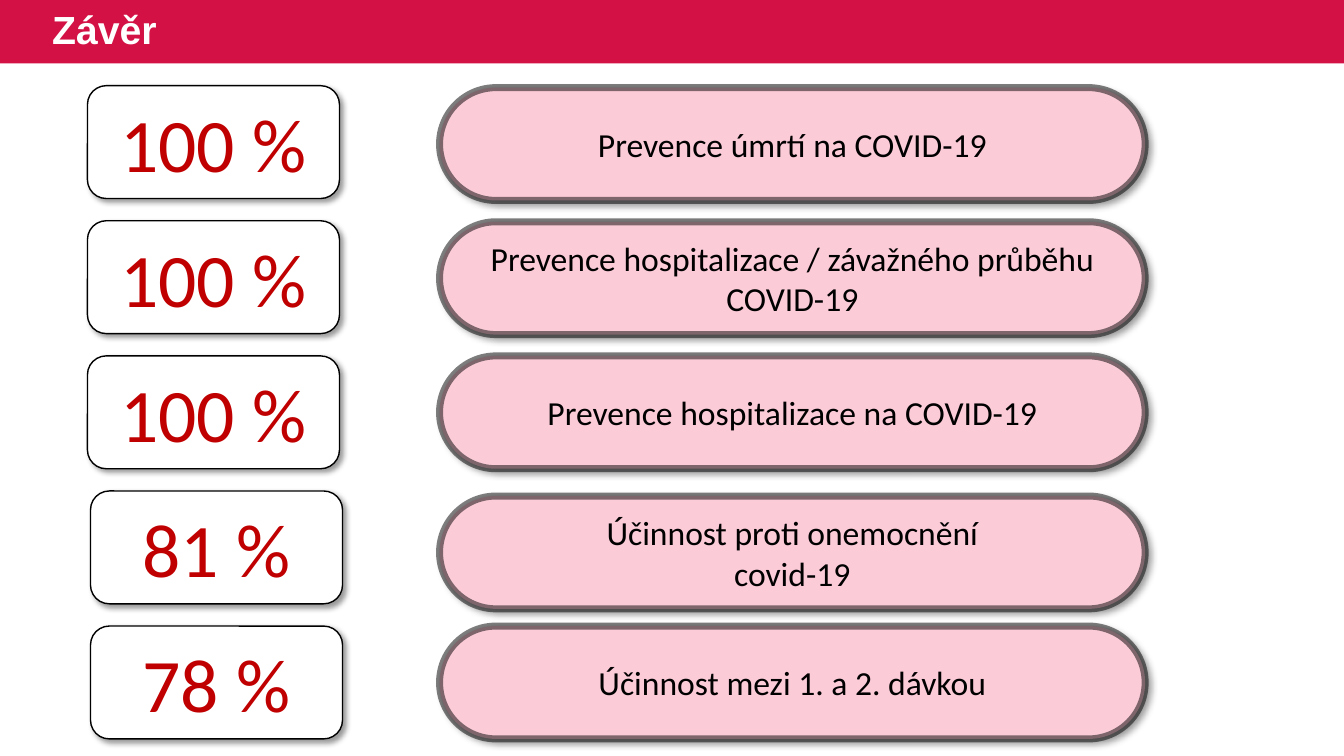
from dataclasses import dataclass

from lxml import etree
from pptx import Presentation
from pptx.dml.color import RGBColor
from pptx.enum.shapes import MSO_SHAPE
from pptx.enum.text import MSO_ANCHOR, PP_ALIGN
from pptx.oxml.ns import qn
from pptx.util import Pt

RECTANGLE = MSO_SHAPE.RECTANGLE
ROUNDED = MSO_SHAPE.ROUNDED_RECTANGLE
MIDDLE = MSO_ANCHOR.MIDDLE
LEFT = PP_ALIGN.LEFT
CENTER = PP_ALIGN.CENTER


@dataclass(frozen=True)
class Theme:
    """Colours, fonts and type sizes of the slide."""
    banner: str = "D31145"
    paper: str = "FFFFFF"
    ink: str = "000000"
    figure: str = "C00000"
    pill: str = "FBCBD8"
    title_font: str = "Arial"
    body_font: str = "Calibri"
    title_size: int = 28
    figure_size: int = 54
    label_size: int = 24


@dataclass(frozen=True)
class Box:
    """A rectangle in points."""
    left: float
    top: float
    width: float
    height: float

    def lengths(self):
        """Return the four sides as slide lengths."""
        return [Pt(side) for side in (self.left, self.top, self.width, self.height)]


THEME = Theme()
ROW_PITCH = 96.5
ROW_HEIGHT = 80.6
RESULTS = [
    ("100 %", ["Prevence úmrtí na COVID-19"], 0, 1.4),
    ("100 %", ["Prevence hospitalizace / závažného průběhu COVID-19"], 0, 0.7),
    ("100 %", ["Prevence hospitalizace na COVID-19"], 0, 0),
    ("81 %", ["Účinnost proti onemocnění", "covid-19"], 2.2, 3.6),
    ("78 %", ["Účinnost mezi 1. a 2. dávkou"], 2.2, 0),
]


def write(shape, lines, font, size, colour, align=CENTER, bold=False):
    """Fill a shape with evenly styled paragraphs."""
    frame = shape.text_frame
    frame.word_wrap = True
    frame.vertical_anchor = MIDDLE
    for index, line in enumerate(lines):
        para = frame.paragraphs[0] if index == 0 else frame.add_paragraph()
        para.text = line
        para.alignment = align
        para.font.name = font
        para.font.size = Pt(size)
        para.font.bold = bold
        para.font.color.rgb = RGBColor.from_string(colour)
    return frame


def add_alpha(colour, percent):
    """Make an XML colour partly transparent."""
    etree.SubElement(colour, qn("a:alpha"), val=str(percent * 1000))


def add_shadow(shape):
    """Give a shape a soft shadow towards the lower right."""
    shape.shadow.inherit = False
    effects = shape._element.spPr.find(qn("a:effectLst"))
    shadow = etree.SubElement(
        effects, qn("a:outerShdw"), blurRad=str(Pt(4)), dist=str(Pt(3)),
        dir=str(45 * 60000), algn="tl", rotWithShape="0")
    add_alpha(etree.SubElement(shadow, qn("a:srgbClr"), val=THEME.ink), 40)


def add_card(page, box, fill, line_width):
    """Draw a rounded, outlined box with a shadow."""
    card = page.shapes.add_shape(ROUNDED, *box.lengths())
    card.fill.solid()
    card.fill.fore_color.rgb = RGBColor.from_string(fill)
    card.line.color.rgb = RGBColor.from_string(THEME.ink)
    card.line.width = Pt(line_width)
    add_shadow(card)
    return card


def add_banner(page, box):
    """Draw the title band and its heading."""
    band = page.shapes.add_shape(RECTANGLE, *box.lengths())
    band.shadow.inherit = False
    band.fill.solid()
    band.fill.fore_color.rgb = RGBColor.from_string(THEME.banner)
    band.line.fill.background()
    heading_box = Box(box.left + 30.2, box.top, 425, box.height)
    heading = page.shapes.add_textbox(*heading_box.lengths())
    frame = write(heading, ["Závěr"], THEME.title_font, THEME.title_size,
                  THEME.paper, LEFT, True)
    frame.paragraphs[0].line_spacing = 0.9


def add_figure(page, box, value):
    """Draw a percentage card."""
    card = add_card(page, box, THEME.paper, 1)
    write(card, [value], THEME.body_font, THEME.figure_size, THEME.figure)


def add_pill(page, box, lines):
    """Draw a label pill with a half-transparent outline."""
    pill = add_card(page, box, THEME.pill, 5)
    pill.adjustments[0] = 0.5
    add_alpha(pill.line._ln.find(".//" + qn("a:srgbClr")), 50)
    frame = write(pill, lines, THEME.body_font, THEME.label_size, THEME.ink)
    frame.margin_left = frame.margin_right = Pt(10.8)
    frame.margin_top = frame.margin_bottom = Pt(2.2)


def add_results(page, box):
    """Stack the result rows, each a figure beside its label."""
    for row, (value, lines, figure_shift, pill_shift) in enumerate(RESULTS):
        top = box.top + row * ROW_PITCH
        add_figure(page, Box(box.left + figure_shift, top, 180, ROW_HEIGHT), value)
        add_pill(page, Box(box.left + box.width - 504, top + pill_shift,
                           504, ROW_HEIGHT), lines)


def main():
    """Build and save the deck."""
    deck = Presentation()
    deck.slide_width, deck.slide_height = Pt(960), Pt(540)
    page = deck.slides.add_slide(deck.slide_layouts[6])
    add_banner(page, Box(0, 0, 960, 45.2))
    add_results(page, Box(62.5, 61.2, 755.5, 466.6))
    deck.save("out.pptx")


if __name__ == "__main__":
    main()
